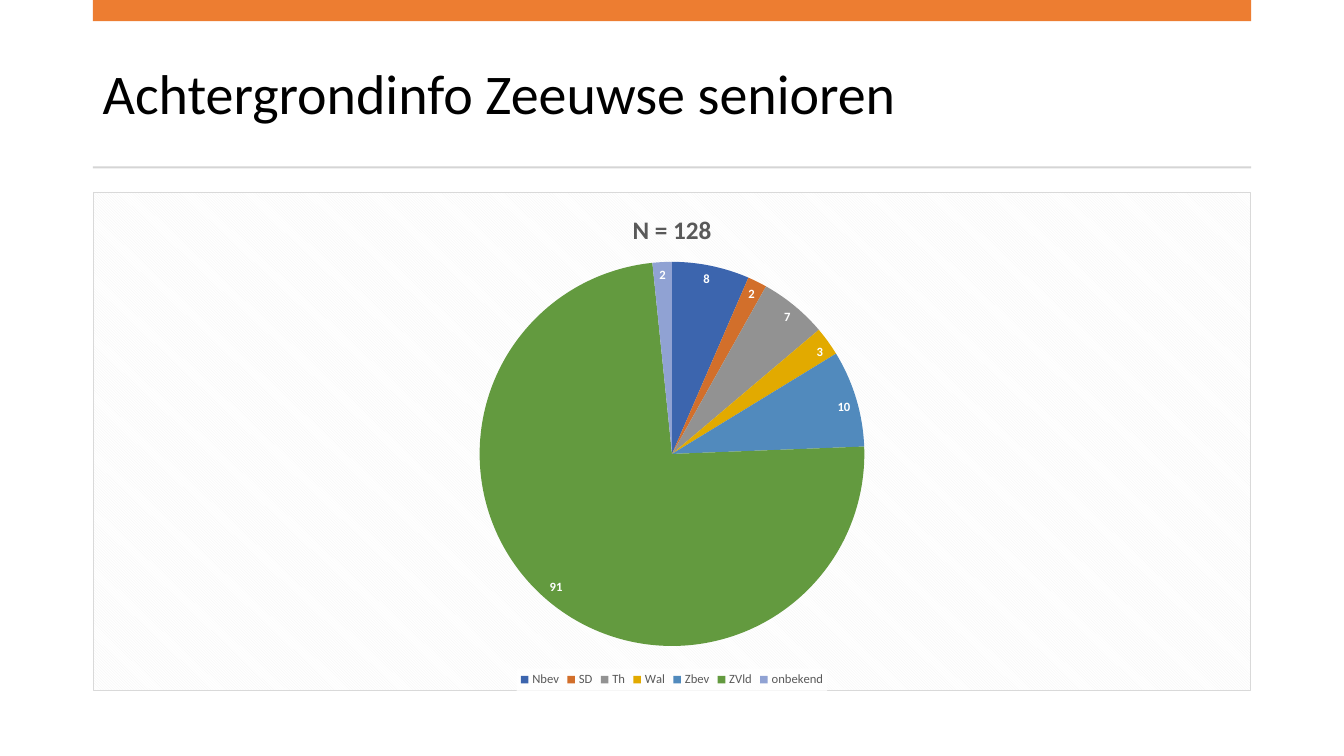
from dataclasses import dataclass

from pptx import Presentation
from pptx.chart.data import CategoryChartData
from pptx.dml.color import RGBColor
from pptx.enum.chart import XL_CHART_TYPE as ChartType
from pptx.enum.chart import XL_LABEL_POSITION as LabelPosition
from pptx.enum.chart import XL_LEGEND_POSITION as LegendPosition
from pptx.enum.shapes import MSO_SHAPE as Preset
from pptx.enum.text import MSO_ANCHOR as Anchor
from pptx.oxml import parse_xml
from pptx.oxml.ns import nsdecls, qn
from pptx.util import Pt

SCALE = 9144
REGIONS = {"Nbev": 8, "SD": 2, "Th": 7, "Wal": 3, "Zbev": 10, "ZVld": 91, "onbekend": 2}


@dataclass(frozen=True)
class Theme:
    font: str = "Calibri"
    title_size: int = 40
    chart_title_size: int = 18
    chart_size: int = 10
    label_size: int = 9
    black: str = "000000"
    white: str = "FFFFFF"
    grey_text: str = "595959"
    accent: str = "ED7D31"
    rule: str = "D5D5D5"
    border: str = "D9D9D9"
    stripe: str = "F2F2F2"
    slices: tuple = ("3C65AE", "D26F2B", "929292", "E2AA00", "518ABD", "639A3F", "90A2D3")


THEME = Theme()


def px(*lengths):
    return [length * SCALE for length in lengths]


def set_font(font, size, color, bold=False):
    values = {"name": THEME.font, "size": Pt(size), "bold": bold}
    for name, value in values.items():
        setattr(font, name, value)
    font.color.rgb = RGBColor.from_string(color)


def add_bar(slide, box, color):
    shape = slide.shapes.add_shape(Preset.RECTANGLE, *px(*box))
    shape.shadow.inherit = False
    shape.fill.solid()
    shape.fill.fore_color.rgb = RGBColor.from_string(color)
    shape.line.fill.background()


def add_header(slide, box):
    left, top, width, height = box
    add_bar(slide, (left, top, width, 21), THEME.accent)
    add_bar(slide, (left, top + height - 2, width, 2), THEME.rule)
    text_frame = slide.shapes.add_textbox(*px(left, top + 37, width, 118)).text_frame
    text_frame.word_wrap = True
    text_frame.vertical_anchor = Anchor.MIDDLE
    paragraph = text_frame.paragraphs[0]
    paragraph.text = "Achtergrondinfo Zeeuwse senioren"
    paragraph.line_spacing = 0.9
    set_font(paragraph.runs[0].font, THEME.title_size, THEME.black)


def style_background(chart):
    area = parse_xml(
        f'<c:spPr {nsdecls("c", "a")}><a:pattFill prst="dkDnDiag">'
        f'<a:fgClr><a:srgbClr val="{THEME.stripe}"/></a:fgClr>'
        f'<a:bgClr><a:srgbClr val="{THEME.white}"/></a:bgClr></a:pattFill>'
        f'<a:ln w="{Pt(0.75)}"><a:solidFill><a:srgbClr val="{THEME.border}"/>'
        "</a:solidFill></a:ln></c:spPr>"
    )
    chart_space = chart.element
    chart_space.find(qn("c:chart")).addnext(area)
    backing = parse_xml(
        f'<c:spPr {nsdecls("c", "a")}><a:solidFill><a:srgbClr val="{THEME.white}">'
        '<a:alpha val="78000"/></a:srgbClr></a:solidFill><a:ln><a:noFill/></a:ln></c:spPr>'
    )
    chart_space.find(".//" + qn("c:legend")).find(qn("c:overlay")).addnext(backing)


def place_pie(chart, fractions):
    plot_area = chart.element.find(".//" + qn("c:plotArea"))
    for layout in plot_area.findall(qn("c:layout")):
        plot_area.remove(layout)
    edges = "".join(f'<c:{name} val="{value}"/>' for name, value in fractions.items())
    plot_area.insert(0, parse_xml(
        f'<c:layout {nsdecls("c")}><c:manualLayout><c:layoutTarget val="inner"/>'
        f'<c:xMode val="edge"/><c:yMode val="edge"/>{edges}</c:manualLayout></c:layout>'
    ))


def add_region_chart(slide, box):
    data = CategoryChartData()
    data.categories = list(REGIONS)
    data.add_series("Series 1", list(REGIONS.values()))
    chart = slide.shapes.add_chart(ChartType.PIE, *px(*box), data).chart
    set_font(chart.font, THEME.chart_size, THEME.black)

    chart.has_title = True
    title = chart.chart_title.text_frame
    title.text = "N = 128"
    set_font(title.paragraphs[0].runs[0].font, THEME.chart_title_size, THEME.grey_text, True)

    chart.has_legend = True
    chart.legend.position = LegendPosition.BOTTOM
    chart.legend.include_in_layout = False
    set_font(chart.legend.font, THEME.label_size, THEME.grey_text)

    plot = chart.plots[0]
    plot.vary_by_categories = True
    series = plot.series[0]
    for index, color in enumerate(THEME.slices):
        point = series.points[index].format
        point.fill.solid()
        point.fill.fore_color.rgb = RGBColor.from_string(color)
        point.line.fill.background()

    labels = series.data_labels
    for name, value in {"show_value": True, "position": LabelPosition.INSIDE_END}.items():
        setattr(labels, name, value)
    set_font(labels.font, THEME.label_size, THEME.white, True)

    style_background(chart)
    place_pie(chart, {"x": 0.33, "y": 0.14, "w": 0.34, "h": 0.77})


def main():
    presentation = Presentation()
    presentation.slide_width, presentation.slide_height = px(1333, 750)
    slide = presentation.slides.add_slide(presentation.slide_layouts[6])
    add_header(slide, (92, 0, 1149, 167))
    add_region_chart(slide, (92, 190, 1149, 496))
    presentation.save("out.pptx")


if __name__ == "__main__":
    main()
